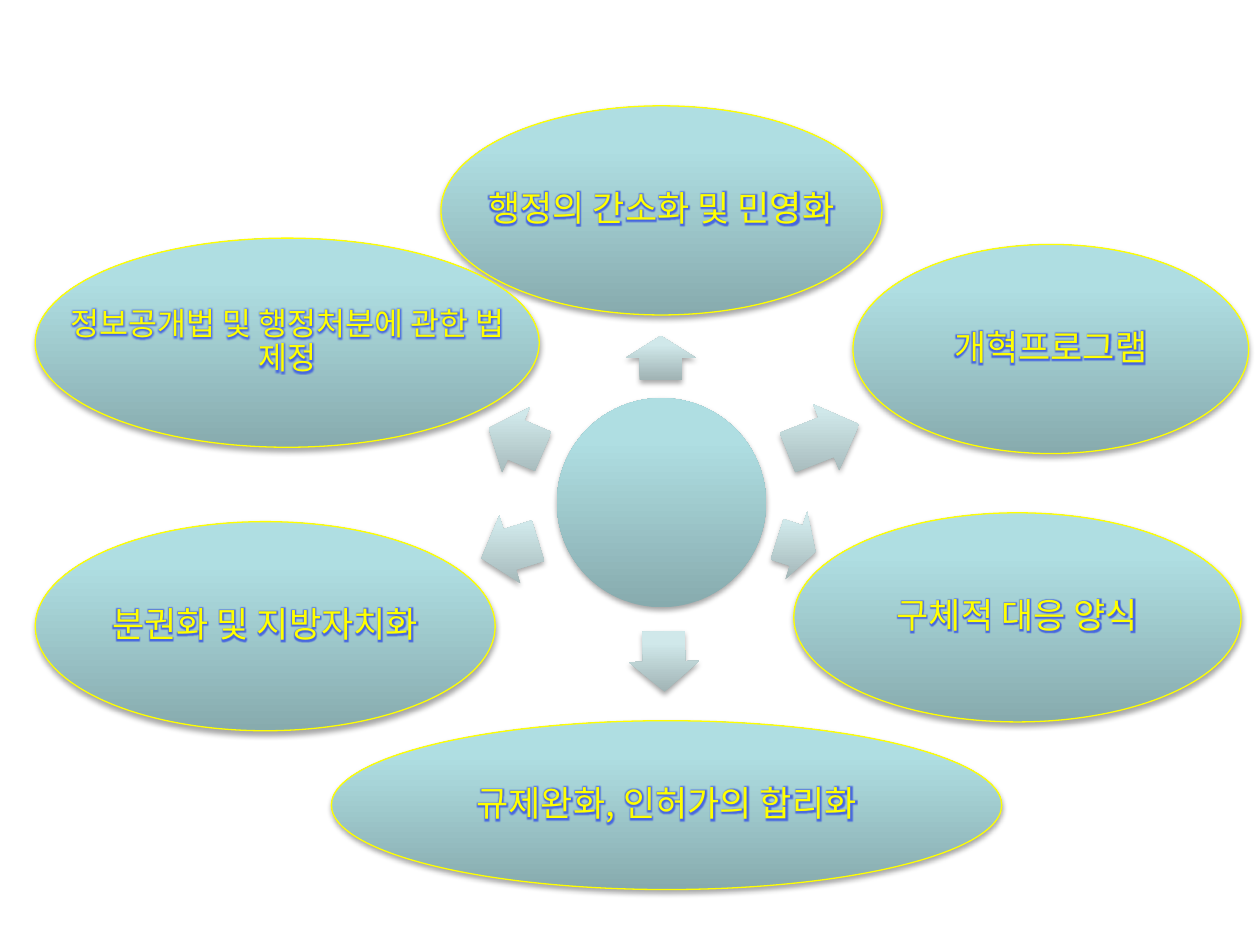
import pptx
import pptx.util
import pptx.dml.color
import pptx.enum.shapes
import pptx.enum.text
import pptx.oxml
import pptx.oxml.ns

Inches, Pt = pptx.util.Inches, pptx.util.Pt
RGBColor = pptx.dml.color.RGBColor
SHAPE = pptx.enum.shapes.MSO_SHAPE
qn = pptx.oxml.ns.qn

YELLOW = RGBColor(0xFF, 0xFF, 0x00)
RED = RGBColor(0xFF, 0x00, 0x00)
BLUE = RGBColor(0x48, 0x68, 0xE0)
BLACK = RGBColor(0x00, 0x00, 0x00)
TEAL = [(0, RGBColor(0x87, 0xAB, 0xAE)), (80, RGBColor(0xAF, 0xDE, 0xE2)),
        (100, RGBColor(0xAF, 0xE0, 0xE4))]
PALE = [(0, RGBColor(0xA0, 0xB3, 0xB4)), (80, RGBColor(0xD0, 0xE8, 0xEA)),
        (100, RGBColor(0xD0, 0xEA, 0xEC))]
FONT = "Noto Sans CJK KR"
NS = pptx.oxml.ns.nsdecls("a")


def add_shaded(kind, box, stops, line=None):
    """Add a shape with an upward gradient and a soft shadow below it."""
    s = slide.shapes.add_shape(kind, *map(Inches, box))
    s.fill.gradient()
    if line is None:
        s.line.fill.background()
    else:
        s.line.color.rgb = line
        s.line.width = Pt(0.75)
    spPr = s._element.spPr
    gs = "".join(f'<a:gs pos="{pos * 1000}"><a:srgbClr val="{color}"/></a:gs>'
                 for pos, color in stops)
    spPr.replace(spPr.find(qn("a:gradFill")), pptx.oxml.parse_xml(
        f'<a:gradFill {NS} rotWithShape="0"><a:gsLst>{gs}</a:gsLst>'
        '<a:lin ang="16200000" scaled="0"/></a:gradFill>'))
    spPr.append(pptx.oxml.parse_xml(
        f'<a:effectLst {NS}><a:outerShdw blurRad="40000" dist="23000" '
        f'dir="5400000" rotWithShape="0"><a:srgbClr val="{BLACK}">'
        '<a:alpha val="35000"/></a:srgbClr></a:outerShdw></a:effectLst>'))
    return s


def add_label(box, text, size):
    """Add centred yellow text with a red outline and a blue glow."""
    tf = slide.shapes.add_textbox(*map(Inches, box)).text_frame
    tf.word_wrap = True
    tf.vertical_anchor = pptx.enum.text.MSO_ANCHOR.MIDDLE
    tf.margin_left = tf.margin_right = Inches(0.03)
    tf.margin_top = tf.margin_bottom = Inches(0.03)
    p = tf.paragraphs[0]
    p.text = text
    p.alignment = pptx.enum.text.PP_ALIGN.CENTER
    p.line_spacing = 0.9
    p.space_after = Pt(size * 0.35)
    r = p.runs[0]
    r.font.size = Pt(size)
    r.font.name = FONT
    r.font.color.rgb = YELLOW
    rPr = r.font._element
    rPr.insert(0, pptx.oxml.parse_xml(
        f'<a:ln {NS} w="9525"><a:solidFill><a:srgbClr val="{RED}"/>'
        '</a:solidFill></a:ln>'))
    rPr.find(qn("a:solidFill")).addnext(pptx.oxml.parse_xml(
        f'<a:effectLst {NS}><a:glow rad="50800"><a:srgbClr val="{BLUE}"/>'
        '</a:glow></a:effectLst>'))
    rPr.find(qn("a:latin")).addnext(pptx.oxml.parse_xml(
        f'<a:ea {NS} typeface="{FONT}"/>'))


prs = pptx.Presentation()
prs.slide_width, prs.slide_height = Inches(10), Inches(7.5)
slide = prs.slides.add_slide(prs.slide_layouts[6])

add_shaded(SHAPE.OVAL, (4.42, 3.16, 1.66, 1.66), TEAL)

# Clockwise from the top: arrow box, arrow rotation, oval box, label, text size
reforms = [
    ((5.07, 2.56, 0.35, 0.56), 270, (3.5, 0.84, 3.5, 1.66),
     "행정의 간소화 및 민영화", 20),
    ((6.23, 3.2, 0.61, 0.56), 338.5, (6.77, 1.94, 3.14, 1.66),
     "개혁프로그램", 20),
    ((6.16, 4.05, 0.32, 0.56), 17.8, (6.3, 4.07, 3.55, 1.66),
     "구체적 대응 양식", 20),
    ((5.03, 4.97, 0.48, 0.56), 88.9, (2.63, 5.72, 5.32, 1.34),
     "규제완화, 인허가의 합리화", 20),
    ((3.81, 4.08, 0.47, 0.56), 162.8, (0.28, 4.14, 3.65, 1.66),
     "분권화 및 지방자치화", 20),
    ((3.86, 3.21, 0.47, 0.56), 203.1, (0.28, 1.89, 4, 1.66),
     "정보공개법 및 행정처분에 관한 법 제정", 18),
]
for arrow_box, rotation, oval_box, text, size in reforms:
    arrow = add_shaded(SHAPE.RIGHT_ARROW, arrow_box, PALE)
    arrow.adjustments[0] = 0.6
    arrow.adjustments[1] = 0.5
    arrow.rotation = rotation
    add_shaded(SHAPE.OVAL, oval_box, TEAL, YELLOW)
    add_label(oval_box, text, size)

prs.save("out.pptx")
